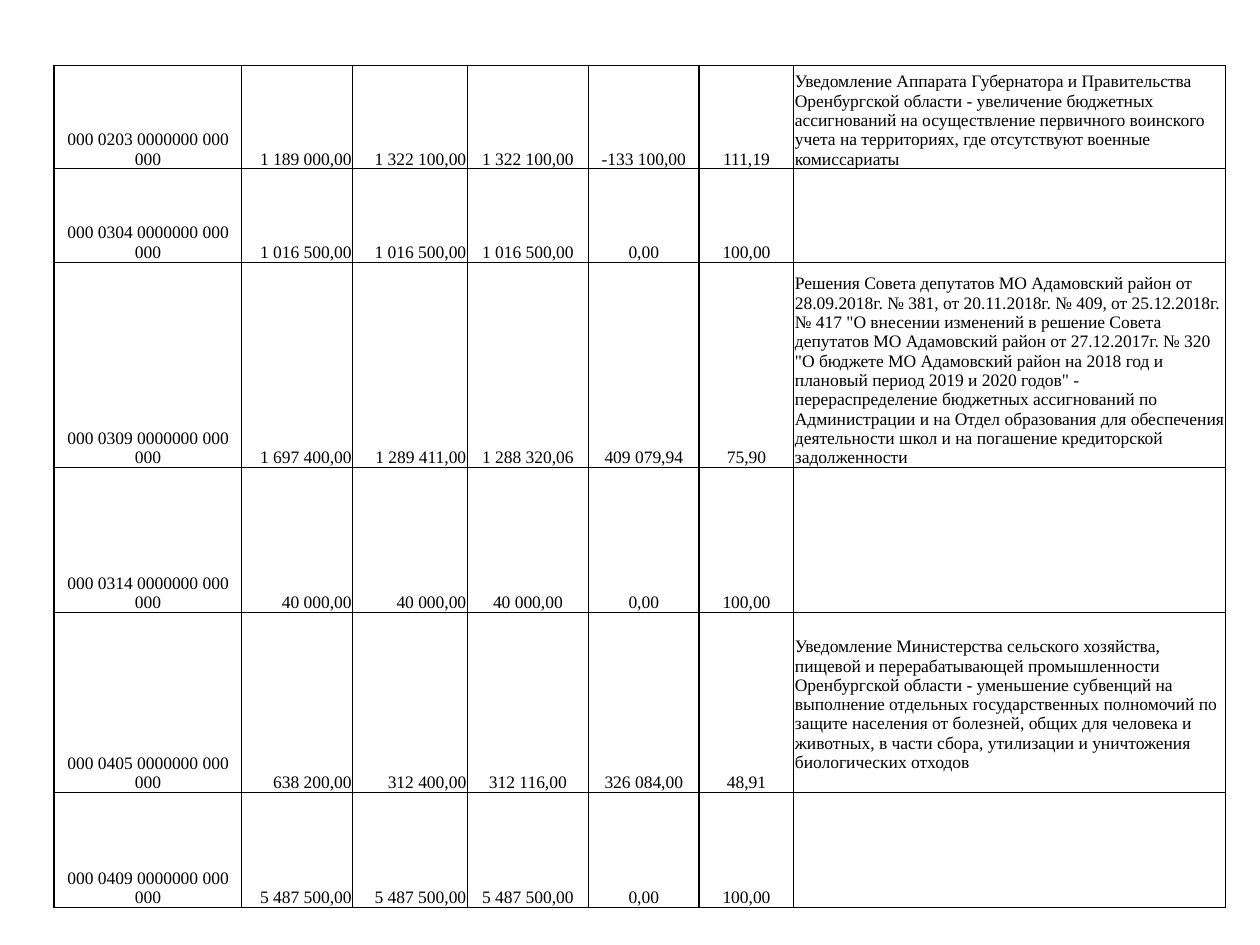
from dataclasses import dataclass

from lxml import etree
from pptx import Presentation
from pptx.dml.color import RGBColor
from pptx.enum.text import MSO_ANCHOR, PP_ALIGN
from pptx.oxml.ns import qn
from pptx.util import Inches, Pt

LEFT, CENTER, RIGHT = PP_ALIGN.LEFT, PP_ALIGN.CENTER, PP_ALIGN.RIGHT
BOTTOM = MSO_ANCHOR.BOTTOM
BLANK_LAYOUT = 6

COLUMN_WIDTHS = [1.49, 0.88, 0.91, 0.96, 0.88, 0.75, 3.43]
COLUMN_ALIGNMENTS = [CENTER, RIGHT, RIGHT, CENTER, CENTER, CENTER, LEFT]
ROW_HEIGHTS = [0.82, 0.74, 1.63, 1.15, 1.43, 0.91]
HEAVY_EDGES = {(0, "L"), (4, "R"), (5, "L")}
RAISED_NOTE_ROW = 4

MILITARY_NOTE = (
    "Уведомление Аппарата Губернатора и Правительства Оренбургской области - "
    "увеличение бюджетных ассигнований на осуществление первичного воинского "
    "учета на территориях, где отсутствуют военные комиссариаты"
)
COUNCIL_NOTE = (
    "Решения Совета депутатов МО Адамовский район от 28.09.2018г. № 381, "
    "от 20.11.2018г. № 409, от 25.12.2018г. № 417 \"О внесении изменений в решение "
    "Совета депутатов МО Адамовский район от 27.12.2017г. № 320 \"О бюджете МО "
    "Адамовский район на 2018 год и плановый период 2019 и 2020 годов\" - "
    "перераспределение бюджетных ассигнований по Администрации и на Отдел "
    "образования для обеспечения деятельности школ и на погашение кредиторской "
    "задолженности"
)
AGRICULTURE_NOTE = (
    "Уведомление Министерства сельского хозяйства, пищевой и перерабатывающей "
    "промышленности Оренбургской области - уменьшение субвенций на выполнение "
    "отдельных государственных полномочий по защите населения от болезней, общих "
    "для человека и животных, в части сбора, утилизации и уничтожения "
    "биологических отходов"
)

# Section, approved plan, revised plan, spent, difference, percent, note
BUDGET_ROWS = [
    ("0203", "1 189 000,00", "1 322 100,00", "1 322 100,00", "-133 100,00", "111,19", MILITARY_NOTE),
    ("0304", "1 016 500,00", "1 016 500,00", "1 016 500,00", "0,00", "100,00", ""),
    ("0309", "1 697 400,00", "1 289 411,00", "1 288 320,06", "409 079,94", "75,90", COUNCIL_NOTE),
    ("0314", "40 000,00", "40 000,00", "40 000,00", "0,00", "100,00", ""),
    ("0405", "638 200,00", "312 400,00", "312 116,00", "326 084,00", "48,91", AGRICULTURE_NOTE),
    ("0409", "5 487 500,00", "5 487 500,00", "5 487 500,00", "0,00", "100,00", ""),
]


@dataclass(frozen=True)
class Theme:
    font: str = "Times New Roman"
    size: Pt = Pt(10)
    ink: str = "000000"
    thin: Pt = Pt(0.5)
    heavy: Pt = Pt(1)
    inset: Inches = Inches(0.01)
    line_height: Inches = Inches(0.16)


class PageBuilder:
    def __init__(self, page, theme):
        self.page = page
        self.theme = theme

    def add_budget_table(self, left, top):
        frame = self.page.shapes.add_table(
            len(BUDGET_ROWS), len(COLUMN_WIDTHS), Inches(left), Inches(top),
            Inches(sum(COLUMN_WIDTHS)), Inches(sum(ROW_HEIGHTS)))
        table = frame.table
        table.first_row = table.horz_banding = False
        for column, width in zip(table.columns, COLUMN_WIDTHS):
            column.width = Inches(width)
        for row, height in zip(table.rows, ROW_HEIGHTS):
            row.height = Inches(height)
        for row_index, (section, *values) in enumerate(BUDGET_ROWS):
            texts = [f"000 {section} 0000000 000 000", *values]
            for column_index, text in enumerate(texts):
                cell = table.cell(row_index, column_index)
                self.format_cell(cell, text, COLUMN_ALIGNMENTS[column_index])
                self.add_borders(cell, column_index)
        note = table.cell(RAISED_NOTE_ROW, len(COLUMN_WIDTHS) - 1)
        note.margin_bottom = self.theme.line_height

    def format_cell(self, cell, text, alignment):
        cell.fill.background()
        cell.vertical_anchor = BOTTOM
        cell.margin_left = cell.margin_right = cell.margin_top = self.theme.inset
        cell.margin_bottom = 0
        cell.text = text
        para = cell.text_frame.paragraphs[0]
        para.alignment = alignment
        para.font.name = self.theme.font
        para.font.size = self.theme.size
        para.font.color.rgb = RGBColor.from_string(self.theme.ink)

    def add_borders(self, cell, column_index):
        """Put the four edge lines ahead of the fill, as the schema requires."""
        properties = cell._tc.get_or_add_tcPr()
        for position, side in enumerate("LRTB"):
            heavy = (column_index, side) in HEAVY_EDGES
            width = self.theme.heavy if heavy else self.theme.thin
            line = etree.Element(qn(f"a:ln{side}"), w=str(int(width)))
            fill = etree.SubElement(line, qn("a:solidFill"))
            etree.SubElement(fill, qn("a:srgbClr"), val=self.theme.ink)
            properties.insert(position, line)


def main():
    deck = Presentation()
    deck.slide_width, deck.slide_height = Inches(10), Inches(7.5)
    page = deck.slides.add_slide(deck.slide_layouts[BLANK_LAYOUT])
    PageBuilder(page, Theme()).add_budget_table(0.43, 0.52)
    deck.save("out.pptx")


if __name__ == "__main__":
    main()
